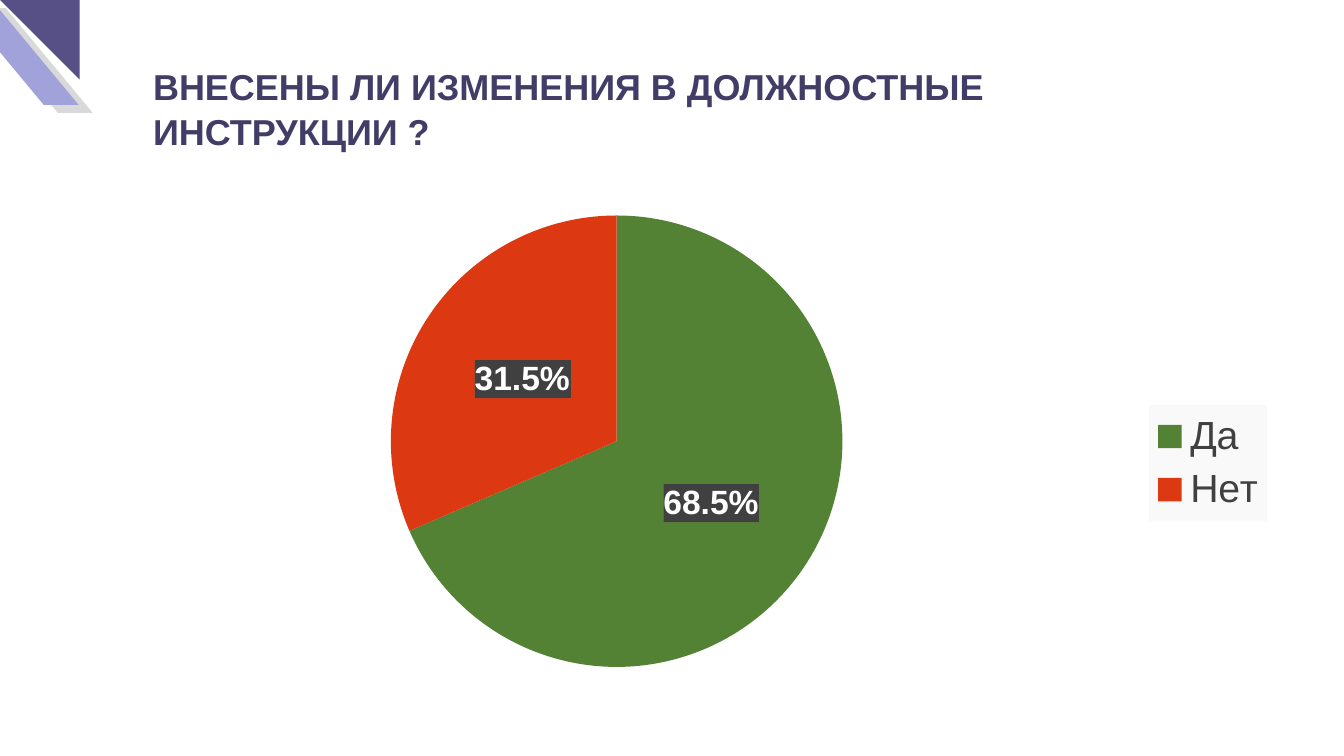
from lxml import etree
from pptx import Presentation
from pptx.chart.data import CategoryChartData
from pptx.dml.color import RGBColor
from pptx.enum import chart as ch, shapes, text
from pptx.oxml import parse_xml
from pptx.oxml.ns import nsdecls, qn
from pptx.util import Inches, Pt

FONT = "Arial"
TITLE = "ВНЕСЕНЫ ЛИ ИЗМЕНЕНИЯ В ДОЛЖНОСТНЫЕ ИНСТРУКЦИИ ?"
ANSWERS = [("Да", 68.5, "548235"), ("Нет", 31.5, "DC3912")]
BANDS = [(-0.29, 0.08, "D9D9D9"), (-0.43, 0, "A2A2DA")]
CHART = (0.92, 2, 11.73, 4.76)
PIE = (3.88, 2.14, 4.48, 4.48)
LEGEND = (11.39, 4.02, 1.17, 1.15)
LABEL_FILL = (
    f'<c:spPr {nsdecls("c", "a")}><a:pattFill prst="dkVert">'
    '<a:fgClr><a:srgbClr val="404040"/></a:fgClr>'
    '<a:bgClr><a:srgbClr val="595959"/></a:bgClr>'
    '</a:pattFill></c:spPr>')
LEGEND_FILL = (
    f'<c:spPr {nsdecls("c", "a")}><a:solidFill>'
    '<a:srgbClr val="F9F9F9"/></a:solidFill></c:spPr>')


def color(code):
    return RGBColor.from_string(code)


def style(font, size, code, bold=False):
    font.name, font.size, font.bold = FONT, Pt(size), bold
    font.color.rgb = color(code)


def paint(shape, code):
    shape.shadow.inherit = False
    shape.fill.solid()
    shape.fill.fore_color.rgb = color(code)
    shape.line.fill.background()


def layout(box, inner=False):
    """Chart layout that puts a part at a box given in slide inches."""
    left, top, wide, high = CHART
    parts = {"x": (box[0] - left) / wide, "y": (box[1] - top) / high,
             "w": box[2] / wide, "h": box[3] / high}
    root = parse_xml(f'<c:layout {nsdecls("c")}><c:manualLayout/></c:layout>')
    items = [("layoutTarget", "inner")] if inner else []
    items += [("xMode", "edge"), ("yMode", "edge")]
    items += [(key, f"{val:.3f}") for key, val in parts.items()]
    for key, val in items:
        etree.SubElement(root[0], qn(f"c:{key}")).set("val", val)
    return root


def set_layout(part, box, after=None, inner=False):
    for old in part.findall(qn("c:layout")):
        part.remove(old)
    new = layout(box, inner)
    if after is None:
        part.insert(0, new)
    else:
        after.addnext(new)


def add_corner(slide):
    for left, top, code in BANDS:
        band = slide.shapes.add_shape(
            shapes.MSO_SHAPE.PARALLELOGRAM,
            Inches(left), Inches(top), Inches(1.21), Inches(1.04))
        band.adjustments[0] = 0.83
        band.element.spPr.find(qn("a:xfrm")).set("flipH", "1")
        paint(band, code)
    side = Inches(0.79)
    corner = slide.shapes.add_shape(
        shapes.MSO_SHAPE.RIGHT_TRIANGLE, 0, 0, side, side)
    corner.rotation = 180
    paint(corner, "565087")


def add_title(slide):
    box = slide.shapes.add_textbox(
        Inches(1.42), Inches(0.59), Inches(9.14), Inches(0.96))
    frame = box.text_frame
    frame.word_wrap = True
    frame.vertical_anchor = text.MSO_ANCHOR.MIDDLE
    para = frame.paragraphs[0]
    para.line_spacing = 1.04
    run = para.add_run()
    run.text = TITLE
    style(run.font, 25.7, "423D67", True)


def add_pie(slide):
    data = CategoryChartData()
    data.categories = [name for name, _, _ in ANSWERS]
    data.add_series("Series 1", [val for _, val, _ in ANSWERS])
    chart = slide.shapes.add_chart(
        ch.XL_CHART_TYPE.PIE, *map(Inches, CHART), data).chart
    chart.has_title = False
    style(chart.font, 10, "000000")

    plot = chart.plots[0]
    plot.vary_by_categories = True
    for i, (_, _, code) in enumerate(ANSWERS):
        fill = plot.series[0].points[i].format.fill
        fill.solid()
        fill.fore_color.rgb = color(code)

    labels = plot.series[0].data_labels
    labels.show_percentage, labels.show_value = True, False
    labels.number_format = "0.0%"
    labels.number_format_is_linked = False
    labels.position = ch.XL_LABEL_POSITION.CENTER
    style(labels.font, 24, "FFFFFF", True)
    fmt = next(chart.element.iter(qn("c:numFmt")))
    fmt.addnext(parse_xml(LABEL_FILL))

    chart.has_legend = True
    legend = chart.legend
    legend.position = ch.XL_LEGEND_POSITION.RIGHT
    legend.include_in_layout = False
    style(legend.font, 28, "404040")
    key = next(chart.element.iter(qn("c:legend")))
    set_layout(key, LEGEND, key.find(qn("c:legendPos")))
    key.find(qn("c:overlay")).addnext(parse_xml(LEGEND_FILL))
    set_layout(next(chart.element.iter(qn("c:plotArea"))), PIE, inner=True)


def main():
    deck = Presentation()
    deck.slide_width, deck.slide_height = Inches(13.33), Inches(7.5)
    slide = deck.slides.add_slide(deck.slide_layouts[6])
    add_corner(slide)
    add_title(slide)
    add_pie(slide)
    deck.save("out.pptx")


if __name__ == "__main__":
    main()
